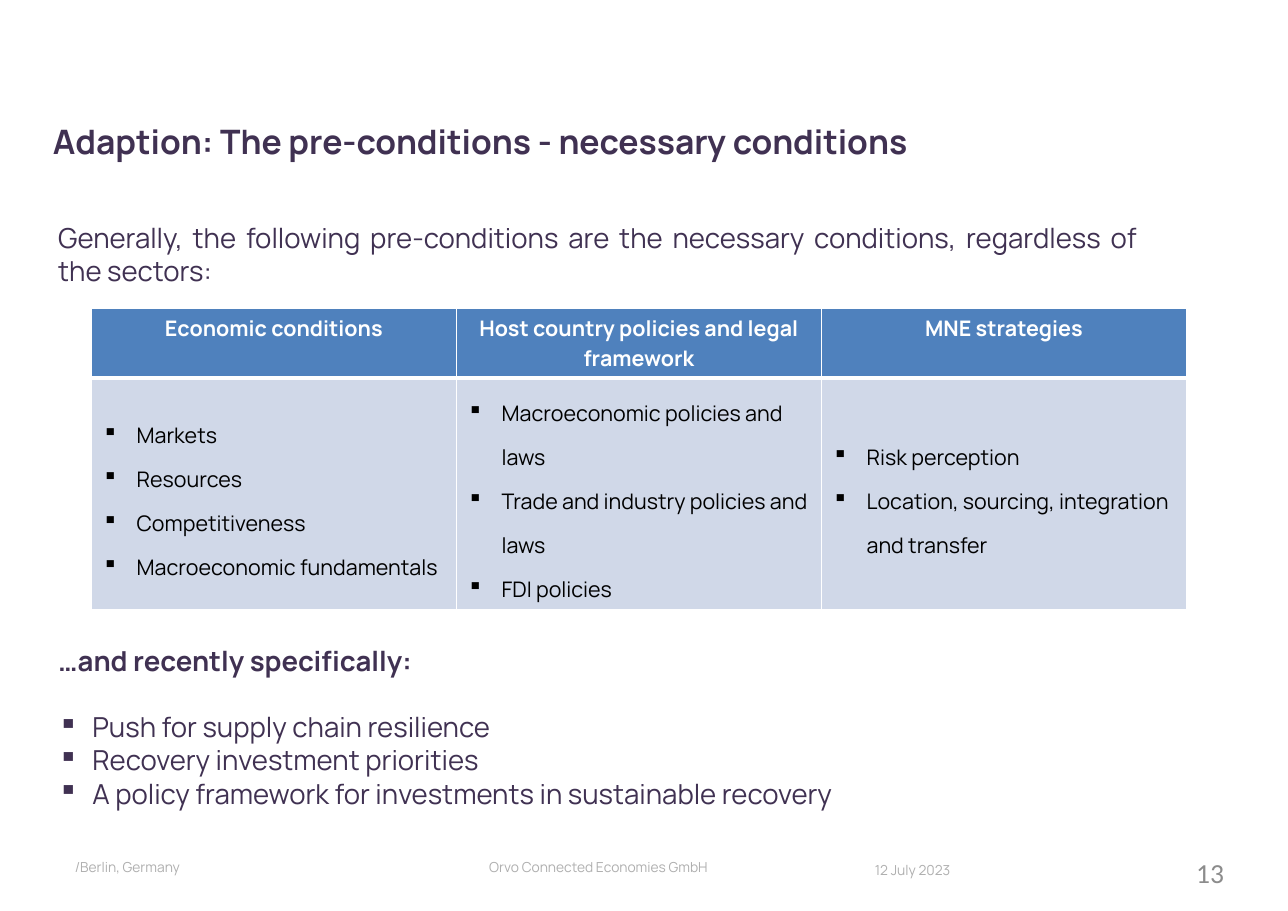
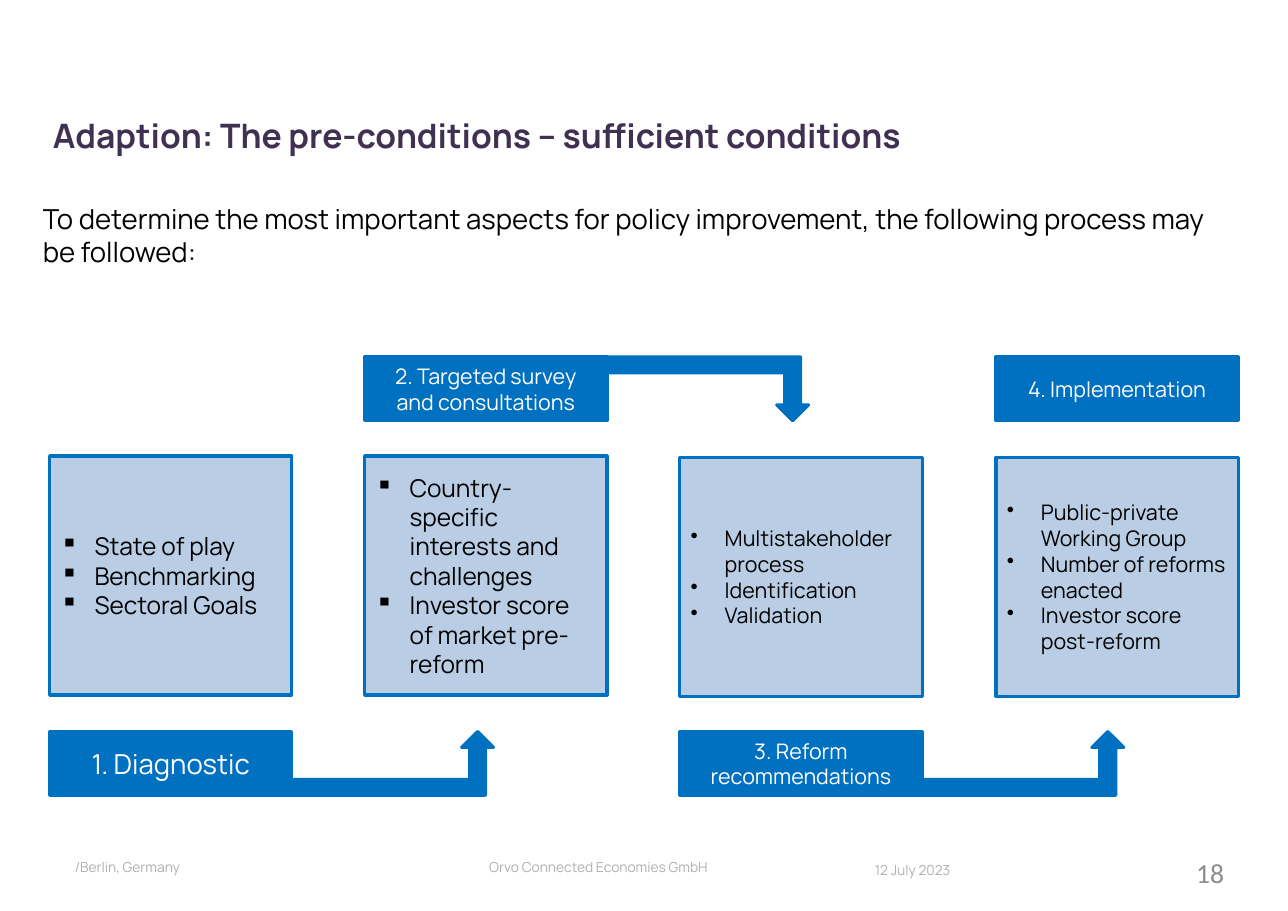
from lxml.etree import SubElement
from pptx import Presentation
from pptx.dml.color import RGBColor
from pptx.enum.shapes import MSO_SHAPE
from pptx.enum.text import MSO_ANCHOR, PP_ALIGN
from pptx.oxml import parse_xml
from pptx.oxml.ns import nsdecls, qn
from pptx.util import Emu, Pt

SCALE = 9144
COLORS = {
    "title": "403152",
    "black": "000000",
    "white": "FFFFFF",
    "footer": "AFAFAF",
    "number": "8C8C8C",
    "header": "4F81BD",
    "cell": "D0D8E8",
    "step": "0070C0",
    "card": "B9CDE5",
}
HANGING = 31


def px(length):
    return Emu(length * SCALE)


def color(name):
    return RGBColor.from_string(COLORS[name])


class SlideBuilder:
    font = "Manrope"

    def __init__(self, width, height):
        self.deck = Presentation()
        self.deck.slide_width = px(width)
        self.deck.slide_height = px(height)
        self.page = None

    def start(self, title, title_top, number):
        self.page = self.deck.slides.add_slide(self.deck.slide_layouts[6])
        self.text((48, title_top, 837, 37), [title], 22, "title", bold=True, inset=False)
        footers = (
            (68, 780, 107, "/Berlin, Germany"),
            (444, 780, 232, "Orvo Connected Economies GmbH"),
            (794, 782, 191, "12 July 2023"),
        )
        for left, top, width, words in footers:
            self.text((left, top, width, 15), [words], 9, "footer", inset=False)
        self.text((1076, 777, 35, 30), [number], 18, "number", inset=False,
                  align=PP_ALIGN.RIGHT, font="Calibri")

    def paragraphs(self, frame, lines, size, ink, bold=False, align=PP_ALIGN.LEFT,
                   bullet=None, spacing=None, font=None):
        for index, line in enumerate(lines):
            paragraph = frame.paragraphs[0] if index == 0 else frame.add_paragraph()
            paragraph.text = line
            paragraph.alignment = align
            if spacing:
                paragraph.line_spacing = spacing
            if bullet:
                properties = paragraph._p.get_or_add_pPr()
                properties.set("marL", str(px(HANGING)))
                properties.set("indent", str(-px(HANGING)))
                SubElement(properties, qn("a:buChar")).set("char", bullet)
            paragraph.font.name = font or self.font
            paragraph.font.size = Pt(size)
            paragraph.font.bold = bold
            paragraph.font.color.rgb = color(ink)

    def text(self, place, lines, size, ink, inset=True, **style):
        box = self.page.shapes.add_textbox(*map(px, place))
        frame = box.text_frame
        frame.word_wrap = True
        if not inset:
            frame.margin_left = frame.margin_right = 0
            frame.margin_top = frame.margin_bottom = 0
        self.paragraphs(frame, lines, size, ink, **style)

    def shape(self, kind, place, fill):
        shape = self.page.shapes.add_shape(kind, *map(px, place))
        shape.shadow.inherit = False
        shape.fill.solid()
        shape.fill.fore_color.rgb = color(fill)
        shape.line.color.rgb = color("step")
        shape.line.width = Pt(2)
        return shape

    def panel(self, place, fill, lines, size, ink, **style):
        frame = self.shape(MSO_SHAPE.RECTANGLE, place, fill).text_frame
        frame.word_wrap = True
        frame.vertical_anchor = MSO_ANCHOR.MIDDLE
        self.paragraphs(frame, lines, size, ink, **style)

    def bent_arrow(self, place, down):
        arrow = self.shape(MSO_SHAPE.BENT_UP_ARROW, place, "step")
        if down:
            arrow._element.spPr.get_or_add_xfrm().set("flipV", "1")

    def cell(self, cell, fill, borders):
        cell.fill.solid()
        cell.fill.fore_color.rgb = color(fill)
        properties = cell._tc.get_or_add_tcPr()
        for index, (side, width) in enumerate(borders.items()):
            properties.insert(index, parse_xml(
                f'<a:ln{side} {nsdecls("a")} w="{Pt(width)}"><a:solidFill>'
                f'<a:srgbClr val="{COLORS["white"]}"/></a:solidFill></a:ln{side}>'))

    def table(self, place, heights, columns):
        table = self.page.shapes.add_table(2, len(columns), *map(px, place)).table
        table.horz_banding = False
        for row, height in zip(table.rows, heights):
            row.height = px(height)
        for index, (heading, items) in enumerate(columns):
            header, body = table.cell(0, index), table.cell(1, index)
            self.cell(header, "header", {"L": 1, "R": 1, "T": 1, "B": 3})
            self.cell(body, "cell", {"L": 1, "R": 1, "T": 3, "B": 1})
            body.vertical_anchor = MSO_ANCHOR.MIDDLE
            self.paragraphs(header.text_frame, [heading], 14, "white", bold=True,
                            align=PP_ALIGN.CENTER)
            self.paragraphs(body.text_frame, items, 14, "black", bullet="▪", spacing=1.5)


def necessary_conditions(builder):
    builder.start("Adaption: The pre-conditions - necessary conditions", 110, "13")
    builder.text((43, 196, 999, 70), [
        "Generally, the following pre-conditions are the necessary conditions, "
        "regardless of the sectors:"], 18, "title", align=PP_ALIGN.JUSTIFY)
    builder.table((83, 280, 994, 273), (63, 210), (
        ("Economic conditions",
         ["Markets", "Resources", "Competitiveness", "Macroeconomic fundamentals"]),
        ("Host country policies and legal framework",
         ["Macroeconomic policies and laws", "Trade and industry policies and laws",
          "FDI policies"]),
        ("MNE strategies",
         ["Risk perception", "Location, sourcing, integration and transfer"]),
    ))
    builder.text((43, 580, 999, 40), ["…and recently specifically:"], 18, "title", bold=True)
    builder.text((43, 640, 999, 100), [
        "Push for supply chain resilience",
        "Recovery investment priorities",
        "A policy framework for investments in sustainable recovery",
    ], 18, "title", bullet="▪")


def sufficient_conditions(builder):
    builder.start("Adaption: The pre-conditions – sufficient conditions", 104, "18")
    builder.text((29, 178, 1085, 71), [
        "To determine the most important aspects for policy improvement, "
        "the following process may be followed:"], 18, "black")
    steps = (
        ("1. Diagnostic", 18, 414, 16, "▪",
         ["State of play", "Benchmarking", "Sectoral Goals"]),
        ("2. Targeted survey and consultations", 14, 414, 16, "▪",
         ["Country-specific interests and challenges", "Investor score of market pre-reform"]),
        ("3. Reform recommendations", 14, 415, 14, "•",
         ["Multistakeholder process", "Identification", "Validation"]),
        ("4. Implementation", 14, 415, 14, "•",
         ["Public-private Working Group", "Number of reforms enacted",
          "Investor score post-reform"]),
    )
    width, height = 220, 58
    for index, (label, label_size, card_top, size, bullet, items) in enumerate(steps):
        left = 45 + index * 859 // 3
        above = index % 2 == 1
        top = 324 if above else 664
        builder.panel((left, card_top, width, 217), "card", items, size, "black", bullet=bullet)
        builder.panel((left, top, width, height), "step", [label], label_size, "white",
                      align=PP_ALIGN.CENTER)
        if index < len(steps) - 1:
            builder.bent_arrow((left + width, top, 183, height), down=above)


def main():
    builder = SlideBuilder(1169, 827)
    necessary_conditions(builder)
    sufficient_conditions(builder)
    builder.deck.save("out.pptx")


if __name__ == "__main__":
    main()
